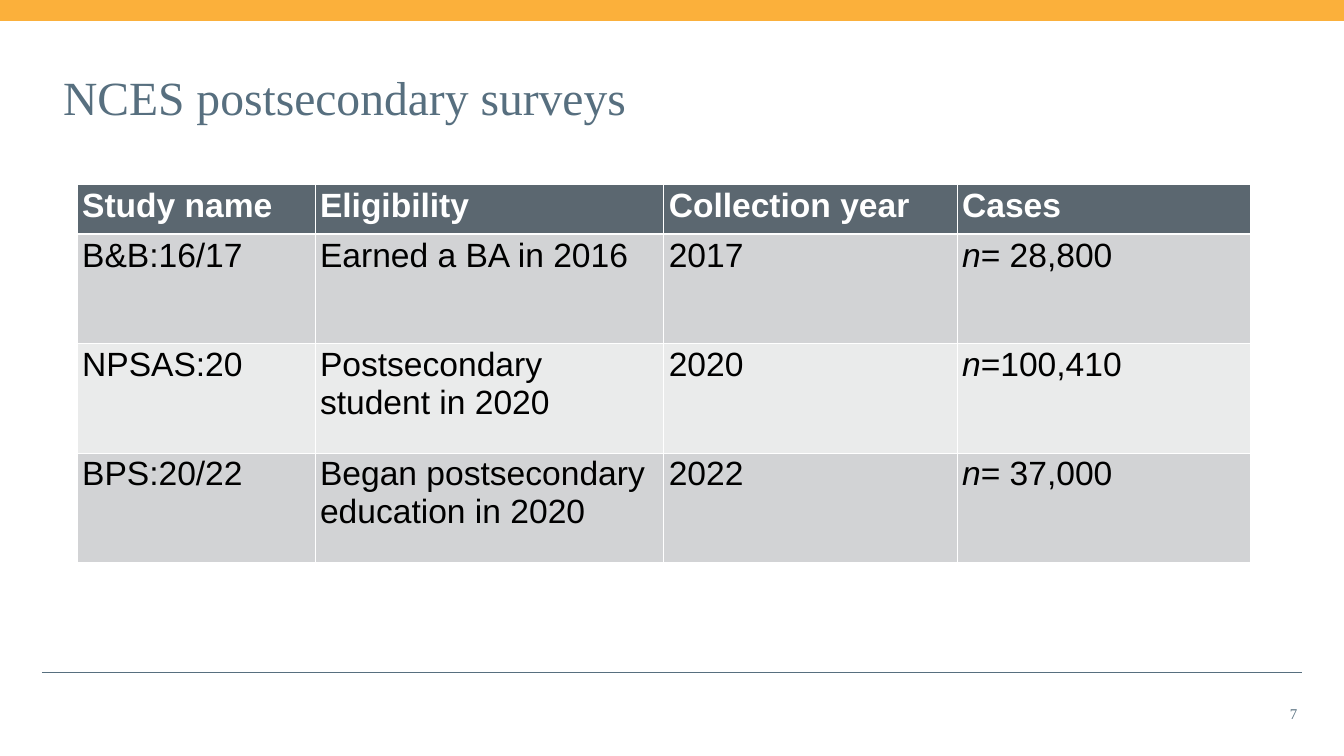
import pptx
import pptx.dml.color
import pptx.enum.shapes
import pptx.enum.text
import pptx.oxml.ns
import pptx.util
from lxml import etree

Pt = pptx.util.Pt
COLORS = {
    "slate": "576F7F",
    "amber": "FBB03B",
    "header": "5B6770",
    "odd": "D2D3D5",
    "even": "EAEBEB",
    "white": "FFFFFF",
    "black": "000000",
}
ROWS = [
    ["Study name", "Eligibility", "Collection year", "Cases"],
    ["B&B:16/17", "Earned a BA in 2016", "2017", "n= 28,800"],
    ["NPSAS:20", "Postsecondary student in 2020", "2020", "n=100,410"],
    ["BPS:20/22", "Began postsecondary education in 2020", "2022", "n= 37,000"],
]
COLUMN_WIDTHS = [339.84, 498.24, 419.04, 419.04]
ROW_HEIGHTS = [71.28, 156.24, 156.24, 156.24]


def rgb(color):
    return pptx.dml.color.RGBColor.from_string(COLORS[color])


def add_run(paragraph, text, color, formats):
    run = paragraph.add_run()
    run.text = text
    run.font.color.rgb = rgb(color)
    for name, value in formats.items():
        setattr(run.font, name, value)


presentation = pptx.Presentation()
presentation.slide_width = Pt(1920)
presentation.slide_height = Pt(1080)
slide = presentation.slides.add_slide(presentation.slide_layouts[6])

footer_line = slide.shapes.add_connector(
    pptx.enum.shapes.MSO_CONNECTOR.STRAIGHT, Pt(60), Pt(960), Pt(1860), Pt(960)
)
footer_line.line.color.rgb = rgb("slate")
footer_line.line.width = Pt(0.75)
etree.SubElement(footer_line._element.spPr, pptx.oxml.ns.qn("a:effectLst"))

top_bar = slide.shapes.add_shape(
    pptx.enum.shapes.MSO_SHAPE.RECTANGLE, 0, 0, Pt(1920), Pt(30)
)
top_bar.shadow.inherit = False
top_bar.fill.solid()
top_bar.fill.fore_color.rgb = rgb("amber")
top_bar.line.fill.background()

labels = [
    ("NCES postsecondary surveys", (90, 90, 1740, 96), 68, 0, "LEFT"),
    ("7", (1785.6, 990.72, 74.88, 57.6), 21.3, 7.2, "RIGHT"),
]
for text, box, size, side_margin, alignment in labels:
    shape = slide.shapes.add_textbox(*[Pt(length) for length in box])
    frame_formats = {
        "word_wrap": True,
        "vertical_anchor": pptx.enum.text.MSO_ANCHOR.MIDDLE,
        "margin_left": Pt(side_margin),
        "margin_right": Pt(side_margin),
        "margin_top": Pt(side_margin / 2),
        "margin_bottom": Pt(side_margin / 2),
    }
    for name, value in frame_formats.items():
        setattr(shape.text_frame, name, value)
    paragraph = shape.text_frame.paragraphs[0]
    paragraph.alignment = pptx.enum.text.PP_ALIGN[alignment]
    add_run(paragraph, text, "slate", {"name": "Times New Roman", "size": Pt(size)})

table = slide.shapes.add_table(
    len(ROWS), len(COLUMN_WIDTHS), Pt(110.16), Pt(263.52),
    Pt(sum(COLUMN_WIDTHS)), Pt(sum(ROW_HEIGHTS)),
).table
for column, width in zip(table.columns, COLUMN_WIDTHS):
    column.width = Pt(width)
for row, height in zip(table.rows, ROW_HEIGHTS):
    row.height = Pt(height)

for row_index, texts in enumerate(ROWS):
    is_header = row_index == 0
    fill = "header" if is_header else "odd" if row_index % 2 else "even"
    for column_index, text in enumerate(texts):
        cell = table.cell(row_index, column_index)
        properties = cell._tc.get_or_add_tcPr()
        for side in ("L", "R", "T", "B"):
            thick = (is_header and side == "B") or (row_index == 1 and side == "T")
            border = etree.SubElement(
                properties, pptx.oxml.ns.qn(f"a:ln{side}"), w=str(Pt(3 if thick else 1))
            )
            border_fill = etree.SubElement(border, pptx.oxml.ns.qn("a:solidFill"))
            etree.SubElement(
                border_fill, pptx.oxml.ns.qn("a:srgbClr"), val=COLORS["white"]
            )
        cell.fill.solid()
        cell.fill.fore_color.rgb = rgb(fill)
        is_count = column_index == 3 and not is_header
        parts = [(text[0], True), (text[1:], False)] if is_count else [(text, False)]
        for part, italic in parts:
            add_run(
                cell.text_frame.paragraphs[0],
                part,
                "white" if is_header else "black",
                {"name": "Arial", "size": Pt(48), "bold": is_header, "italic": italic},
            )

presentation.save("out.pptx")
